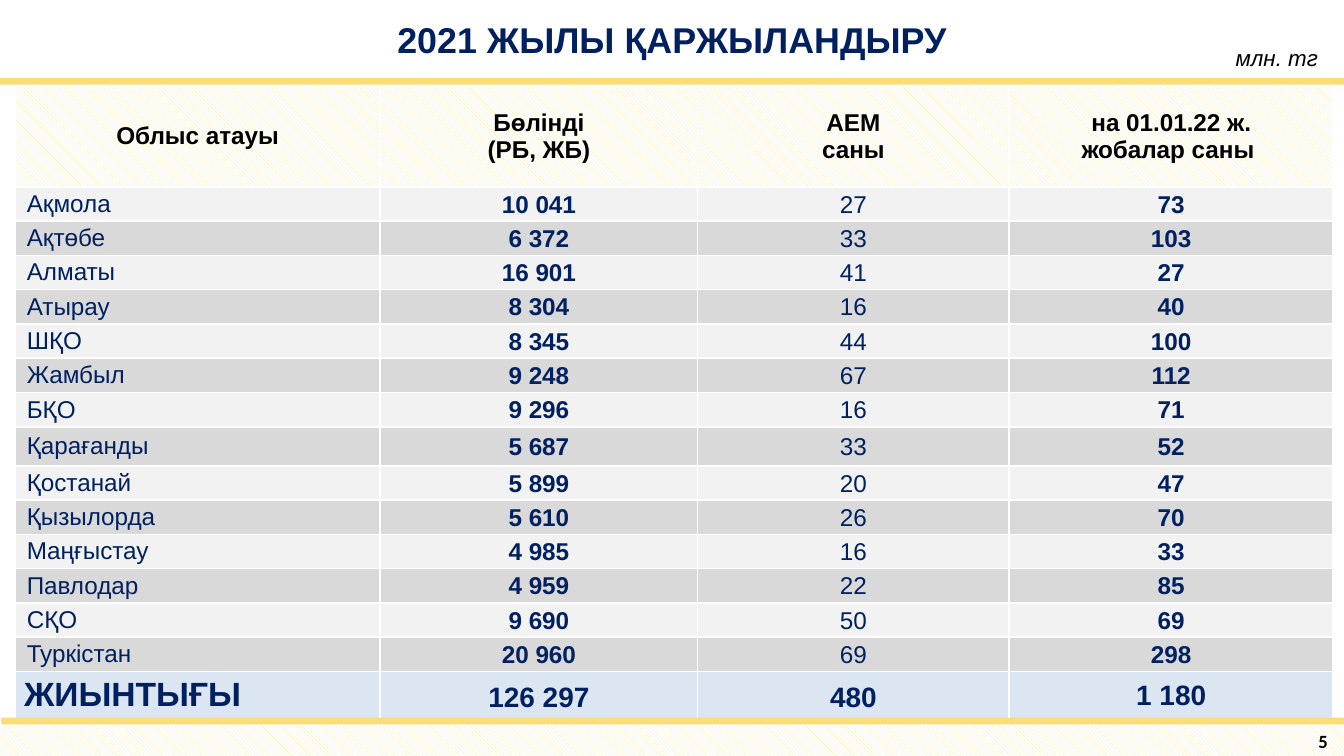
from lxml import etree
from pptx import Presentation
from pptx.dml.color import RGBColor
from pptx.enum.dml import MSO_PATTERN
from pptx.enum.shapes import MSO_SHAPE
from pptx.enum.text import MSO_ANCHOR, MSO_AUTO_SIZE, PP_ALIGN
from pptx.oxml.ns import qn
from pptx.util import Inches, Pt

LEFT, MID, RIGHT = PP_ALIGN.LEFT, PP_ALIGN.CENTER, PP_ALIGN.RIGHT
CENTER = MSO_ANCHOR.MIDDLE
HATCH = MSO_PATTERN.LIGHT_DOWNWARD_DIAGONAL
NAVY, BLACK, WHITE = "002060", "000000", "FFFFFF"
GOLD, CREAM, TOTAL = "FBDD76", "FDE8A4", "DCE6F2"
BANDS = "F2F2F2", "D9D9D9"

TITLE = "2021 жылы қаржыландыру"
UNIT = "млн. тг"
PAGE = "5"
# \v breaks a line, \n starts a paragraph
HEAD = ["Облыс атауы", "Бөлінді\v (РБ, ЖБ) ", "АЕМ\nсаны",
        "на 01.01.22 ж.\nжобалар саны "]
REGIONS = [
    ("Ақмола", "10 041", "27", "73"),
    ("Ақтөбе", "6 372", "33", "103"),
    ("Алматы", "16 901", "41", "27"),
    ("Атырау", "8 304", "16", "40"),
    ("ШҚО", "8 345", "44", "100"),
    ("Жамбыл", "9 248", "67", "112"),
    ("БҚО", "9 296", "16", "71"),
    ("Қарағанды", "5 687", "33", "52"),
    ("Қостанай", "5 899", "20", "47"),
    ("Қызылорда", "5 610", "26", "70"),
    ("Маңғыстау", "4 985", "16", "33"),
    ("Павлодар", "4 959", "22", "85"),
    ("СҚО", "9 690", "50", "69"),
    ("Туркістан", "20 960", "69", "298"),
]
SUM = ("ЖИЫНТЫҒЫ", "126 297", "480", "1 180")

WIDE = 10
HIGH = WIDE * 9 / 16
COLS = [2.72, 2.36, 2.32, 2.41]
TALL = "Қарағанды"
TABLE_H, HEAD_H, TALL_H, SUM_H = 4.71, 0.75, 0.29, 0.35
ROW_H = (TABLE_H - HEAD_H - TALL_H - SUM_H) / (len(REGIONS) - 1)


def rgb(code):
    return RGBColor.from_string(code)


def paint(fill, code):
    fill.solid()
    fill.fore_color.rgb = rgb(code)


def hatch(fill):
    fill.patterned()
    fill.pattern = HATCH
    fill.fore_color.rgb = rgb(CREAM)
    fill.back_color.rgb = rgb(WHITE)


def write(frame, text, color=NAVY, align=MID, name="Arial", **style):
    frame.text = text
    for para in frame.paragraphs:
        para.alignment = align
        for run in para.runs:
            run.font.name = name
            run.font.color.rgb = rgb(color)
            for key, value in style.items():
                setattr(run.font, key, value)


def edge(cell):
    """Give the cell white borders; call before filling it."""
    props = cell._tc.get_or_add_tcPr()
    for side in ("lnL", "lnR", "lnT", "lnB"):
        line = etree.SubElement(props, qn("a:" + side), w=str(Pt(1)))
        fill = etree.SubElement(line, qn("a:solidFill"))
        etree.SubElement(fill, qn("a:srgbClr"), val=WHITE)


def put(cell, text, pad=(0, 0, 0, 0), **style):
    cell.vertical_anchor = CENTER
    sides = ("left", "top", "right", "bottom")
    for side, gap in zip(sides, pad):
        setattr(cell, "margin_" + side, Inches(gap))
    edge(cell)
    write(cell.text_frame, text, **style)


def bar(slide, *box):
    shape = slide.shapes.add_shape(MSO_SHAPE.RECTANGLE, *map(Inches, box))
    shape.shadow.inherit = False
    shape.line.fill.background()
    return shape


def add_grid(slide):
    heights = [HEAD_H]
    heights += [TALL_H if row[0] == TALL else ROW_H for row in REGIONS]
    heights.append(SUM_H)
    grid = slide.shapes.add_table(
        len(heights), len(COLS), Inches(0.11), Inches(0.64),
        Inches(sum(COLS)), Inches(TABLE_H)).table
    grid.first_row = grid.horz_banding = False
    for col, width in zip(grid.columns, COLS):
        col.width = Inches(width)
    for row, height in zip(grid.rows, heights):
        row.height = Inches(height)

    for c, text in enumerate(HEAD):
        cell = grid.cell(0, c)
        put(cell, text, color=BLACK, size=Pt(13), bold=True)
        hatch(cell.fill)

    for r, row in enumerate(REGIONS):
        for c, text in enumerate(row):
            cell = grid.cell(r + 1, c)
            pad = (0.01, 0.01, 0.01, 0) if c else (0.09, 0, 0, 0)
            put(cell, text, pad, align=MID if c else LEFT,
                size=Pt(13), bold=c in (1, 3))
            paint(cell.fill, BANDS[r % 2])

    pads = [(0.07, 0, 0, 0), (0.04, 0.04, 0.04, 0),
            (0.04, 0.04, 0.04, 0), (0.01, 0.01, 0.01, 0)]
    for c, text in enumerate(SUM):
        cell = grid.cell(len(heights) - 1, c)
        put(cell, text, pads[c], align=MID if c else LEFT,
            size=Pt(15 if c else 18), bold=True)
        paint(cell.fill, TOTAL)


def main():
    deck = Presentation()
    deck.slide_width, deck.slide_height = Inches(WIDE), Inches(HIGH)
    slide = deck.slides.add_slide(deck.slide_layouts[5])

    title = slide.shapes.title
    title.left, title.top = Inches(0), Inches(-0.02)
    title.width, title.height = Inches(WIDE), Inches(0.57)
    frame = title.text_frame
    write(frame, TITLE, size=Pt(24), bold=True)
    frame.auto_size = MSO_AUTO_SIZE.NONE
    frame.vertical_anchor = CENTER
    frame.paragraphs[0].runs[0].font._element.set("cap", "small")

    add_grid(slide)

    unit = slide.shapes.add_textbox(
        Inches(9.09), Inches(0.28), Inches(0.82), Inches(0.3))
    unit.text_frame.word_wrap = False
    write(unit.text_frame, UNIT, color=BLACK, size=Pt(12), italic=True)

    foot = bar(slide, -0.01, 5.4, 10.01, 0.23)
    hatch(foot.fill)
    frame = foot.text_frame
    frame.vertical_anchor = CENTER
    frame.margin_right = Inches(0.12)
    write(frame, PAGE, color=BLACK, align=RIGHT, name="Calibri",
          size=Pt(10), bold=True)

    for left, top in ((0, 0.58), (0.01, 5.34)):
        paint(bar(slide, left, top, WIDE, 0.05).fill, GOLD)

    deck.save("out.pptx")


if __name__ == "__main__":
    main()
